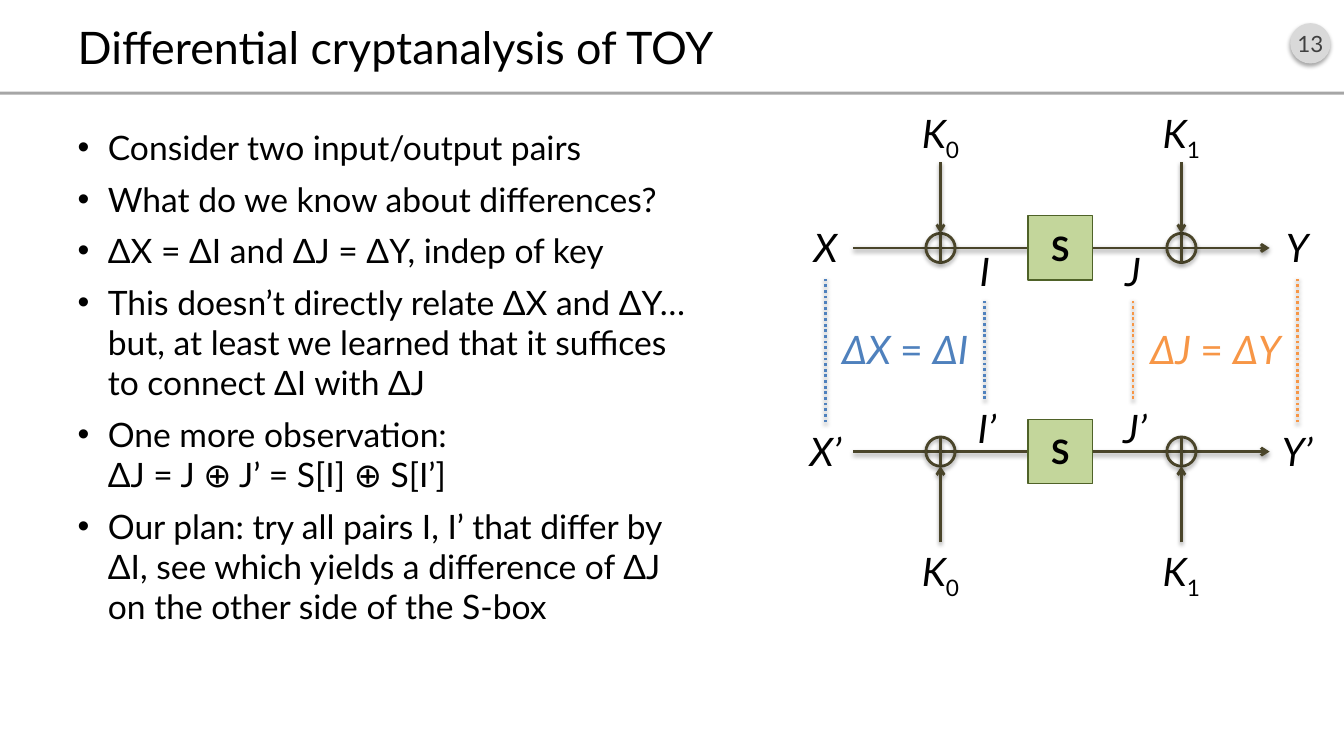
from dataclasses import dataclass

from lxml import etree
from pptx import Presentation
from pptx import util as u
from pptx.dml.color import RGBColor
from pptx.enum import dml, shapes, text
from pptx.oxml.ns import qn

# Grid: every length below is a number of cells, ten to the inch
COLS, ROWS = 133.33, 75
CELL = 0.1
FONT = "Lato"
COLORS = {
    "text": "000000", "badge": "D9D9D9", "number": "404040", "rule": "A6A6A6",
    "wire": "4A452A", "box": "C3D69B", "edge": "4F6228",
    "input": "4F81BD", "output": "F79646",
}

# Diagram columns and sizes
X_COL, I_COL, J_COL, Y_COL = 81.9, 97.7, 112.4, 128.7
KEY_COLS = {"0": 93.3, "1": 117.2}
S_COL, S_SIZE = 105.2, 6.4
RING = 2.9
LABEL_W, LABEL_H, KEY_W = 5.5, 5.7, 7.7

BULLETS = [
    "Consider two input/output pairs",
    "What do we know about differences?",
    "ΔX = ΔI and ΔJ = ΔY, indep of key",
    "This doesn’t directly relate ΔX and ΔY… but, at least we learned "
    "that it suffices to connect ΔI with ΔJ",
    "One more observation:\nΔJ = J ⊕ J’ = S[I] ⊕ S[I’]",
    "Our plan: try all pairs I, I’ that differ by ΔI, see which yields "
    "a difference of ΔJ on the other side of the S-box",
]


@dataclass
class Round:
    axis: float       # row of the horizontal wire
    key_top: float    # top of the key labels
    key_start: float  # row where the key arrows begin
    side: int         # -1: keys enter from above, 1: from below
    inner_top: float  # top of the I and J labels
    inner_shift: float
    prime: str


@dataclass
class Difference:
    cols: tuple[float, float]
    spans: tuple[tuple[float, float], tuple[float, float]]
    left: float
    terms: tuple[str, str]
    color: str


ROUNDS = [
    Round(24.6, 10.4, 16.1, -1, 24, 0, ""),
    Round(44.8, 53.8, 53.8, 1, 39.6, 0.2, "’"),
]
OUTER, INNER = (41.9, 27.5), (39.6, 29.8)
DIFFERENCES = [
    Difference((X_COL, I_COL), (OUTER, INNER), 81.8, ("ΔX ", "ΔI"), "input"),
    Difference((J_COL, Y_COL), (INNER, OUTER), 112.6, ("ΔJ ", "ΔY"), "output"),
]


def grid(*cells: float) -> list[u.Emu]:
    return [u.Inches(c * CELL) for c in cells]


def rgb(name: str) -> RGBColor:
    return RGBColor.from_string(COLORS[name])


def style(r, size: float, color: str = "text", bold=False, italic=False) -> None:
    r.font.name, r.font.size = FONT, u.Pt(size)
    r.font.bold, r.font.italic = bold, italic
    r.font.color.rgb = rgb(color)


def add_shadow(sp, alpha: int, dist: float) -> None:
    effects = etree.SubElement(sp._element.spPr, qn("a:effectLst"))
    shadow = etree.SubElement(effects, qn("a:outerShdw"), blurRad=str(u.Pt(3.1)),
                              dist=str(u.Pt(dist)), dir="5400000", rotWithShape="0")
    color = etree.SubElement(shadow, qn("a:srgbClr"), val=COLORS["text"])
    etree.SubElement(color, qn("a:alpha"), val=str(alpha * 1000))


def add_shape(s, kind, box: tuple, fill="", line="", width=1.0, shadow=False):
    sp = s.shapes.add_shape(kind, *grid(*box))
    if fill:
        sp.fill.solid()
        sp.fill.fore_color.rgb = rgb(fill)
    else:
        sp.fill.background()
    if line:
        sp.line.color.rgb, sp.line.width = rgb(line), u.Pt(width)
    else:
        sp.line.fill.background()
    if shadow:
        add_shadow(sp, 35, 1.8)
    else:
        sp.shadow.inherit = False
    return sp


def add_caption(sp, caption: str, size: float, color="text", bold=False) -> None:
    tf = sp.text_frame
    tf.margin_left = tf.margin_right = tf.margin_top = tf.margin_bottom = 0
    tf.vertical_anchor = text.MSO_ANCHOR.MIDDLE
    tf.word_wrap = False
    tf.text = caption
    p = tf.paragraphs[0]
    p.alignment = text.PP_ALIGN.CENTER
    style(p.runs[0], size, color, bold)


def add_wire(s, start: tuple, end: tuple, color="wire", arrow=False, dotted=False):
    c = s.shapes.add_connector(shapes.MSO_CONNECTOR.STRAIGHT, *grid(*start, *end))
    c.line.color.rgb, c.line.width = rgb(color), u.Pt(2)
    if dotted:
        c.line.dash_style = dml.MSO_LINE.ROUND_DOT
    if arrow:
        etree.SubElement(c.line._get_or_add_ln(), qn("a:tailEnd"), type="arrow")
    add_shadow(c, 38, 1.6)


def add_label(s, left: float, top: float, width: float, parts: list[str],
              color="text", subscript=False, inset=0.1) -> None:
    """Parts alternate between italic and upright."""
    tf = s.shapes.add_textbox(*grid(left, top, width, LABEL_H)).text_frame
    tf.word_wrap = True
    tf.auto_size = text.MSO_AUTO_SIZE.SHAPE_TO_FIT_TEXT
    tf.margin_left = tf.margin_right = u.Inches(inset)
    p = tf.paragraphs[0]
    p.alignment = text.PP_ALIGN.CENTER
    for i, part in enumerate(parts):
        r = p.add_run()
        r.text = part
        style(r, 28, color, italic=i % 2 == 0)
        if subscript and i == 1:
            r.font._element.set("baseline", "-25000")


def add_round(s, rd: Round) -> None:
    half = LABEL_W / 2
    outer_top = rd.axis - 2.9
    for col, top, name in ((X_COL, outer_top, "X"), (Y_COL, outer_top, "Y"),
                           (I_COL + rd.inner_shift, rd.inner_top, "I"),
                           (J_COL + rd.inner_shift, rd.inner_top, "J")):
        add_label(s, col - half, top, LABEL_W, [name + rd.prime])
    add_wire(s, (X_COL + half, rd.axis), (Y_COL - half, rd.axis), arrow=True)

    # Key additions
    r = RING / 2
    for index, col in KEY_COLS.items():
        add_label(s, col - KEY_W / 2, rd.key_top, KEY_W, ["K", index], subscript=True)
        add_shape(s, shapes.MSO_SHAPE.OVAL, (col - r, rd.axis - r, RING, RING),
                  line="wire", width=2, shadow=True)
        add_wire(s, (col, rd.axis - r), (col, rd.axis + r))
        add_wire(s, (col, rd.key_start), (col, rd.axis + rd.side * r), arrow=True)

    # S-box
    sp = add_shape(s, shapes.MSO_SHAPE.RECTANGLE,
                   (S_COL - S_SIZE / 2, rd.axis - S_SIZE / 2, S_SIZE, S_SIZE),
                   "box", "edge")
    add_caption(sp, "S", 24, bold=True)


def add_text(s) -> None:
    title, body = s.shapes.title, s.placeholders[1]
    for sp, box in ((title, (6.7, 1.6, 120, 6)), (body, (6.7, 12.1, 63.7, 57.5))):
        sp.left, sp.top, sp.width, sp.height = grid(*box)
        sp.text_frame.auto_size = text.MSO_AUTO_SIZE.NONE
    title.text_frame.text = "Differential cryptanalysis of TOY"
    title.text_frame.vertical_anchor = text.MSO_ANCHOR.MIDDLE
    p = title.text_frame.paragraphs[0]
    p.alignment = text.PP_ALIGN.LEFT
    style(p.runs[0], 32)

    tf = body.text_frame
    for i, bullet in enumerate(BULLETS):
        p = tf.add_paragraph() if i else tf.paragraphs[0]
        p.text = bullet
        p.space_before = u.Pt(8)
        pPr = p._p.get_or_add_pPr()
        pPr.set("marL", str(u.Inches(0.3)))
        pPr.set("indent", str(u.Inches(-0.3)))
        etree.SubElement(pPr, qn("a:buFont"), typeface="Arial")
        etree.SubElement(pPr, qn("a:buChar"), char="•")
        for r in p.runs:
            style(r, 24)


def main() -> None:
    prs = Presentation()
    prs.slide_width, prs.slide_height = grid(COLS, ROWS)
    s = prs.slides.add_slide(prs.slide_layouts[1])

    # Header and list
    badge = add_shape(s, shapes.MSO_SHAPE.OVAL, (128, 2.3, 4, 4), "badge", shadow=True)
    add_caption(badge, "13", 16, "number")
    add_shape(s, shapes.MSO_SHAPE.RECTANGLE, (0, 9.1, COLS, 0.3), "rule")
    add_text(s)

    # Cipher diagram
    for rd in ROUNDS:
        add_round(s, rd)
    for d in DIFFERENCES:
        for col, (low, high) in zip(d.cols, d.spans):
            add_wire(s, (col, low), (col, high), d.color, dotted=True)
        add_label(s, d.left, 31.8, 16, [d.terms[0], "= ", d.terms[1]], d.color, inset=0)

    prs.save("out.pptx")


if __name__ == "__main__":
    main()
